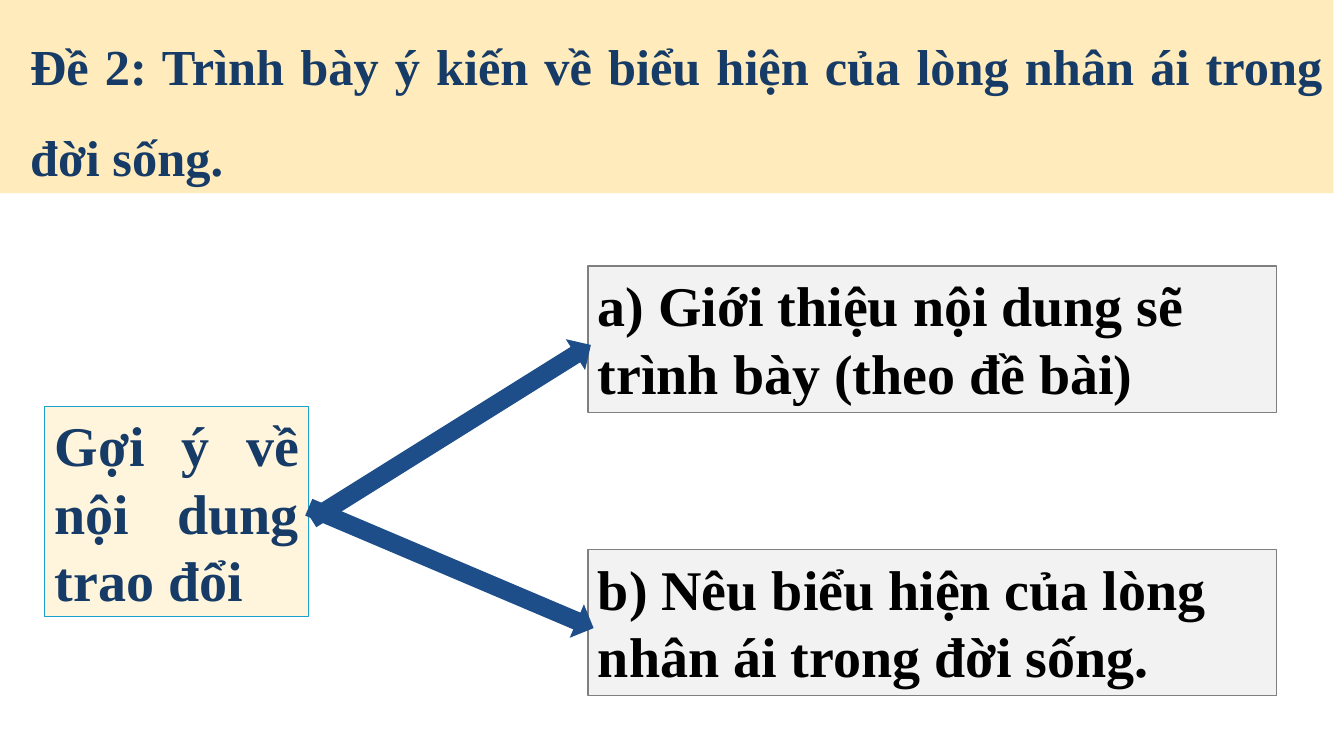
import math
from dataclasses import dataclass

import pptx
import pptx.dml.color
import pptx.enum.shapes
import pptx.enum.text
import pptx.util

Pt = pptx.util.Pt
SHAPE = pptx.enum.shapes.MSO_SHAPE
ALIGN = pptx.enum.text.PP_ALIGN


@dataclass(frozen=True)
class Theme:
    font: str = "Times New Roman"
    title_size: int = 36
    body_size: int = 40
    navy: str = "163B67"
    black: str = "000000"
    banner: str = "FFEBBB"
    cream: str = "FFF5DD"
    grey: str = "F2F2F2"
    grey_line: str = "7F7F7F"
    blue_line: str = "1AA1D0"
    arrow: str = "1D4E89"


THEME = Theme()


def colour(code):
    return pptx.dml.color.RGBColor.from_string(code)


def add_block(page, kind, box, fill, line=None):
    shape = page.shapes.add_shape(kind, *(Pt(length) for length in box))
    shape.shadow.inherit = False
    shape.fill.solid()
    shape.fill.fore_color.rgb = colour(fill)
    if line:
        shape.line.color.rgb = colour(line)
        shape.line.width = Pt(0.75)
    else:
        shape.line.fill.background()
    return shape


def write(shape, text, size, ink, align):
    frame = shape.text_frame
    frame.word_wrap = True
    frame.vertical_anchor = pptx.enum.text.MSO_ANCHOR.TOP
    frame.text = text
    para = frame.paragraphs[0]
    para.alignment = align
    font = para.runs[0].font
    font.name, font.size, font.bold = THEME.font, Pt(size), True
    font.color.rgb = colour(ink)
    return para


# Title band across the top
def add_banner(page, box, text):
    band = add_block(page, SHAPE.RECTANGLE, box, THEME.banner)
    para = write(band, text, THEME.title_size, THEME.navy, ALIGN.JUSTIFY)
    para.line_spacing = 1.5
    para._p.get_or_add_pPr().set("marL", str(Pt(14.4)))


# Block arrow running from its tail point to its tip point
def add_arrow(page, tail, tip, thickness=26):
    across, down = tip[0] - tail[0], tip[1] - tail[1]
    length = math.hypot(across, down)
    left = (tail[0] + tip[0] - length) / 2
    top = (tail[1] + tip[1] - thickness) / 2
    arrow = add_block(page, SHAPE.RIGHT_ARROW, (left, top, length, thickness), THEME.arrow)
    arrow.rotation = round(math.degrees(math.atan2(down, across)))


# Hub on the left, with an arrow to each branch on the right
def add_branches(page, box, hub_text, branches):
    left, top, width, height = box
    hub_width, hub_height = 188.6, 150.5
    hub_top = top + 100
    branch_width, branch_height = 492, 104.5
    branch_left = left + width - branch_width
    step = (height - branch_height) / (len(branches) - 1)

    hub = add_block(page, SHAPE.RECTANGLE, (left, hub_top, hub_width, hub_height),
                    THEME.cream, THEME.blue_line)
    write(hub, hub_text, THEME.body_size, THEME.navy, ALIGN.JUSTIFY)

    for index, (text, tail_shift, tip_shift) in enumerate(branches):
        branch_top = top + index * step
        branch = add_block(page, SHAPE.RECTANGLE,
                           (branch_left, branch_top, branch_width, branch_height),
                           THEME.grey, THEME.grey_line)
        write(branch, text, THEME.body_size, THEME.black, ALIGN.LEFT)
        tail = (left + hub_width + tail_shift[0], hub_top + hub_height / 2 + tail_shift[1])
        tip = (branch_left + tip_shift[0], branch_top + branch_height / 2 + tip_shift[1])
        add_arrow(page, tail, tip)


def main():
    deck = pptx.Presentation()
    deck.slide_width, deck.slide_height = Pt(960), Pt(540)
    page = deck.slides.add_slide(deck.slide_layouts[6])
    add_banner(page, (0, 0, 952.5, 138),
               "Đề 2: Trình bày ý kiến về biểu hiện của lòng nhân ái trong đời sống.")
    # Each branch: text, shift of the arrow's tail, shift of its tip
    add_branches(page, (32, 190, 880, 307), "Gợi ý về nội dung trao đổi", [
        ("a) Giới thiệu nội dung sẽ trình bày (theo đề bài)", (2, 6), (2, 4)),
        ("b) Nêu biểu hiện của lòng nhân ái trong đời sống.", (0, -3), (4, 4)),
    ])
    deck.save("out.pptx")


if __name__ == "__main__":
    main()
